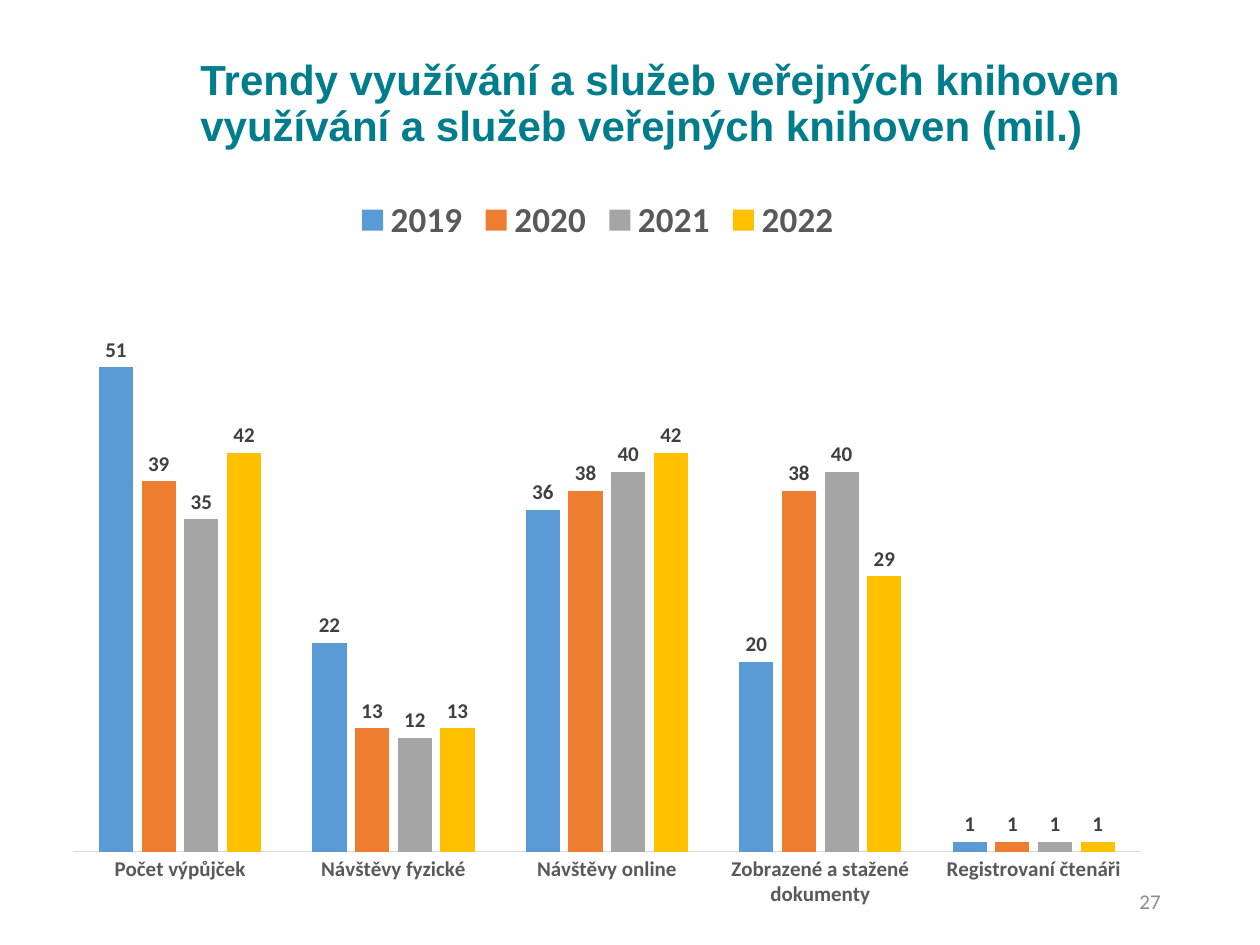
from dataclasses import dataclass

from lxml import etree
from pptx import Presentation
from pptx.chart.data import CategoryChartData
from pptx.dml.color import RGBColor
from pptx.enum.chart import (XL_CHART_TYPE, XL_LABEL_POSITION,
                             XL_LEGEND_POSITION, XL_TICK_MARK)
from pptx.enum.text import MSO_ANCHOR, PP_ALIGN
from pptx.oxml.ns import qn
from pptx.util import Inches, Pt

COLUMNS = XL_CHART_TYPE.COLUMN_CLUSTERED
OUTSIDE = XL_LABEL_POSITION.OUTSIDE_END
TOP = XL_LEGEND_POSITION.TOP
NO_TICK = XL_TICK_MARK.NONE
MIDDLE = MSO_ANCHOR.MIDDLE
LEFT, RIGHT = PP_ALIGN.LEFT, PP_ALIGN.RIGHT


@dataclass(frozen=True)
class Theme:
    head: str = "Arial"
    body: str = "Calibri"
    teal: str = "007D8C"
    text: str = "595959"
    label: str = "404040"
    rule: str = "D9D9D9"
    pale: str = "8C8C8C"
    bars: tuple = ("5B9BD5", "ED7D31", "A5A5A5", "FFC000")
    title: int = 24
    legend: int = 20
    small: int = 12


THEME = Theme()
WIDE, HIGH = Inches(10), Inches(7.5)

# Boxes as shares of the slide: left, top, width, height
TITLE_BOX = (0.149, 0.069, 0.802, 0.084)
CHART_BOX = (0.024, 0.193, 0.901, 0.787)
PAGE_BOX = (0.706, 0.927, 0.225, 0.053)
# Plot area as shares of the chart
PLOT = {"x": 0.038, "y": 0.134, "w": 0.94, "h": 0.766}

GROUPS = ["Počet výpůjček", "Návštěvy fyzické", "Návštěvy online",
          "Zobrazené a stažené dokumenty", "Registrovaní čtenáři"]
YEARS = {
    "2019": (51, 22, 36, 20, 1),
    "2020": (39, 13, 38, 38, 1),
    "2021": (35, 12, 40, 40, 1),
    "2022": (42, 13, 42, 29, 1),
}


def scale(box):
    return [round(share * size)
            for share, size in zip(box, (WIDE, HIGH, WIDE, HIGH))]


def style(font, name, size, color, bold=True):
    font.name, font.size, font.bold = name, Pt(size), bold
    font.color.rgb = RGBColor.from_string(color)


def add_title(slide, box, text):
    title = slide.shapes.title
    title.left, title.top, title.width, title.height = scale(box)
    frame = title.text_frame
    frame.text = text
    frame.word_wrap = True
    frame.vertical_anchor = MIDDLE
    para = frame.paragraphs[0]
    para.alignment = LEFT
    para.line_spacing = 0.9
    style(para.font, THEME.head, THEME.title, THEME.teal)


def add_page(slide, box, number):
    frame = slide.shapes.add_textbox(*scale(box)).text_frame
    frame.text = number
    frame.word_wrap = True
    frame.vertical_anchor = MIDDLE
    para = frame.paragraphs[0]
    para.alignment = RIGHT
    style(para.font, THEME.body, THEME.small, THEME.pale, False)


def fix_plot(chart, shares):
    """Give the inner plot area a fixed place within the chart."""
    area = chart._chartSpace.chart.plotArea
    old = area.find(qn("c:layout"))
    if old is not None:
        area.remove(old)
    layout = etree.Element(qn("c:layout"))
    area.insert(0, layout)
    manual = etree.SubElement(layout, qn("c:manualLayout"))
    parts = {"layoutTarget": "inner", "xMode": "edge", "yMode": "edge"}
    for tag, val in {**parts, **shares}.items():
        etree.SubElement(manual, qn(f"c:{tag}")).set("val", str(val))


def add_chart(slide, box):
    data = CategoryChartData(number_format="0")
    data.categories = GROUPS
    for year, values in YEARS.items():
        data.add_series(year, values)
    chart = slide.shapes.add_chart(COLUMNS, *scale(box), data).chart
    chart.font.name, chart.font.size = THEME.body, Pt(10)
    chart.has_title = False
    fix_plot(chart, PLOT)

    # Legend
    chart.has_legend = True
    chart.legend.position = TOP
    chart.legend.include_in_layout = False
    style(chart.legend.font, THEME.body, THEME.legend, THEME.text)

    # Axes
    groups, values = chart.category_axis, chart.value_axis
    groups.major_tick_mark = groups.minor_tick_mark = NO_TICK
    groups.format.line.color.rgb = RGBColor.from_string(THEME.rule)
    groups.format.line.width = Pt(0.75)
    style(groups.tick_labels.font, THEME.body, THEME.small, THEME.text)
    values.visible = False
    values.has_major_gridlines = False
    values.minimum_scale, values.maximum_scale = 0, 60

    # Bars and their labels
    plot = chart.plots[0]
    plot.vary_by_categories = False
    plot.gap_width, plot.overlap = 150, -25
    for series, color in zip(plot.series, THEME.bars):
        series.format.fill.solid()
        series.format.fill.fore_color.rgb = RGBColor.from_string(color)
        labels = series.data_labels
        labels.show_value = True
        labels.position = OUTSIDE
        labels.number_format = "0"
        labels.number_format_is_linked = False
        style(labels.font, THEME.body, THEME.small, THEME.label)


def main():
    deck = Presentation()
    deck.slide_width, deck.slide_height = WIDE, HIGH
    slide = deck.slides.add_slide(deck.slide_layouts[5])
    add_title(slide, TITLE_BOX,
              "Trendy využívání a služeb veřejných knihoven "
              "využívání a služeb veřejných knihoven (mil.)")
    add_chart(slide, CHART_BOX)
    add_page(slide, PAGE_BOX, "27")
    deck.save("out.pptx")


if __name__ == "__main__":
    main()
